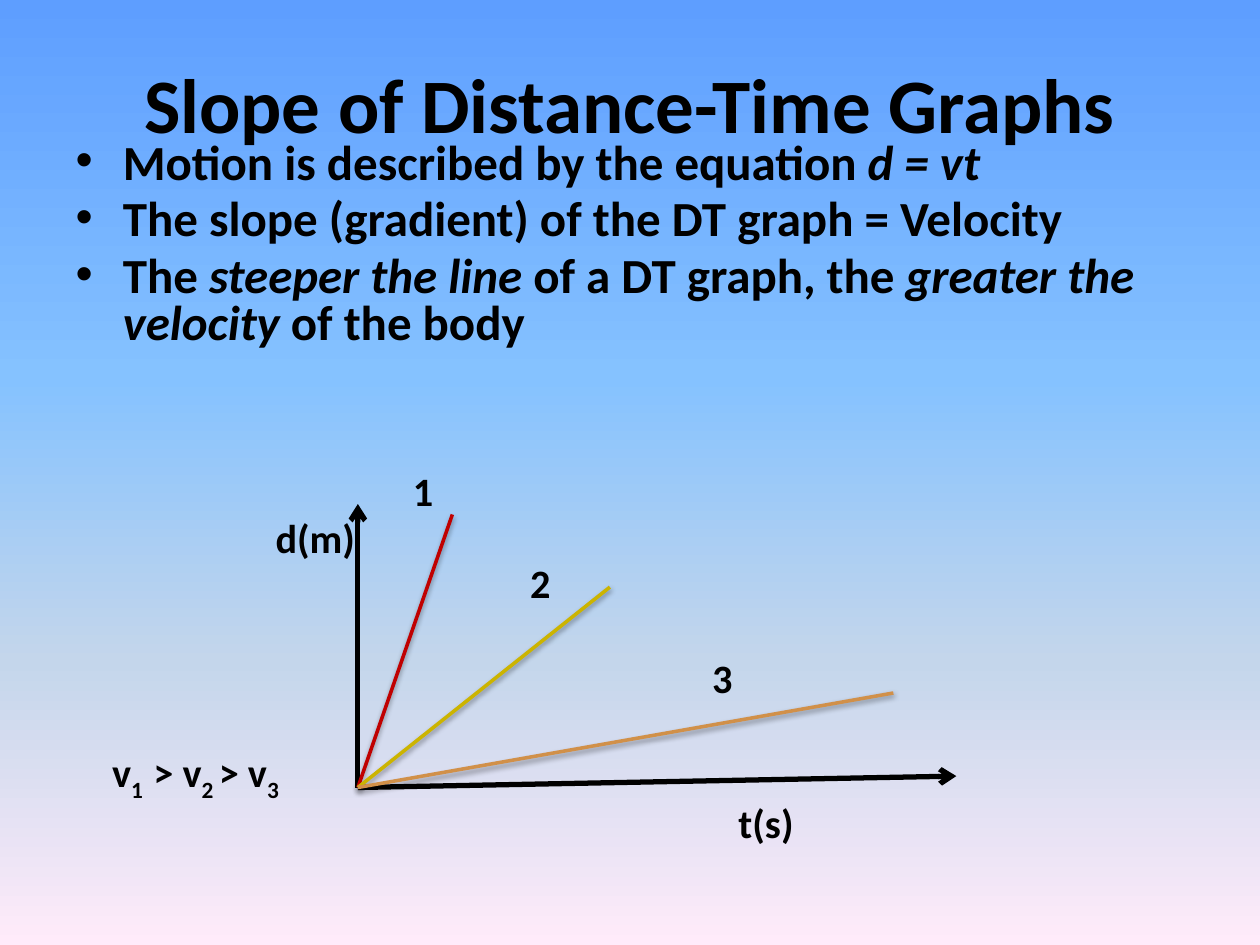
from lxml.etree import SubElement
from pptx import Presentation
from pptx.dml.color import RGBColor
from pptx.enum.shapes import MSO_CONNECTOR as Connector
from pptx.enum.text import MSO_ANCHOR as Anchor, PP_ALIGN as Align
from pptx.oxml.ns import qn
from pptx.util import Pt

COLORS = {
    "text": "000000",
    "steep": "C00000",
    "medium": "CCB400",
    "shallow": "D19049",
}
BACKGROUND_STOPS = [(0, "5E9EFF"), (40, "85C2FF"), (70, "C4D6EB"), (100, "FFEBFA")]


def add_run(paragraph, text, size, italic=False, subscript=False):
    run = paragraph.add_run()
    run.text = text
    run.font.name = "Calibri"
    run.font.size = Pt(size)
    run.font.bold = True
    run.font.italic = italic
    run.font.color.rgb = RGBColor.from_string(COLORS["text"])
    if subscript:
        run.font._element.set("baseline", "-25000")


def add_line(start, end, color, width):
    connector = slide.shapes.add_connector(
        Connector.STRAIGHT, *[Pt(value) for value in (*start, *end)]
    )
    connector.line.color.rgb = RGBColor.from_string(COLORS[color])
    connector.line.width = Pt(width)
    effects = SubElement(connector._element.spPr, qn("a:effectLst"))
    return connector, effects


presentation = Presentation()
presentation.slide_width = Pt(720)
presentation.slide_height = Pt(540)
slide = presentation.slides.add_slide(presentation.slide_layouts[1])

background = slide.background.fill
background.gradient()
background.gradient_angle = 270
stop_list = slide.element.find(".//" + qn("a:gsLst"))
for stop in list(stop_list):
    stop_list.remove(stop)
for position, color in BACKGROUND_STOPS:
    stop = SubElement(stop_list, qn("a:gs"), pos=str(position * 1000))
    SubElement(stop, qn("a:srgbClr"), val=color)

body = slide.placeholders[1]
body.left, body.top, body.width, body.height = Pt(36), Pt(77.76), Pt(648), Pt(200)
bullets = [
    [("Motion is described by the equation ", False), ("d = vt", True)],
    [("The slope (gradient) of the DT graph = Velocity", False)],
    [
        ("The ", False),
        ("steeper the line ", True),
        ("of a DT graph, the ", False),
        ("greater the velocity ", True),
        ("of the body", False),
    ],
]
for index, runs in enumerate(bullets):
    frame = body.text_frame
    paragraph = frame.paragraphs[0] if index == 0 else frame.add_paragraph()
    paragraph.line_spacing = 0.8
    for text, italic in runs:
        add_run(paragraph, text, 28, italic=italic)

title = slide.shapes.title
title.left, title.top, title.width, title.height = Pt(36), Pt(21.6), Pt(648), Pt(74)
title.text_frame.vertical_anchor = Anchor.MIDDLE
title_paragraph = title.text_frame.paragraphs[0]
title_paragraph.alignment = Align.CENTER
add_run(title_paragraph, "Slope of Distance-Time Graphs", 44)

origin = (204.5, 450)
for axis_end in [(204.5, 288), (546.5, 443.5)]:
    axis, effects = add_line(origin, axis_end, "text", 3)
    SubElement(axis.line._get_or_add_ln(), qn("a:tailEnd"), type="arrow")

graph_lines = [
    ((258.5, 294), "steep"),
    ((348.5, 335.5), "medium"),
    ((510.5, 396), "shallow"),
]
for line_end, color in graph_lines:
    graph_line, effects = add_line(origin, line_end, color, 2)
    shadow = SubElement(
        effects, qn("a:outerShdw"),
        blurRad=str(Pt(3.1)), dist=str(Pt(1.6)), dir="5400000", rotWithShape="0",
    )
    shadow_color = SubElement(shadow, qn("a:srgbClr"), val=COLORS["text"])
    SubElement(shadow_color, qn("a:alpha"), val="38000")

labels = [
    (236, 280, 20, [("1", False)]),
    (157.5, 307, 50, [("d(m)", False)]),
    (303, 333, 20, [("2", False)]),
    (407, 387, 20, [("3", False)]),
    (64, 443, 110, [
        ("v", False), ("1  ", True), ("> v", False),
        ("2 ", True), ("> v", False), ("3", True),
    ]),
    (422, 470, 40, [("t(s)", False)]),
]
for left, middle, width, runs in labels:
    label = slide.shapes.add_textbox(Pt(left), Pt(middle - 14), Pt(width), Pt(28))
    frame = label.text_frame
    frame.margin_left = frame.margin_right = frame.margin_top = frame.margin_bottom = 0
    frame.vertical_anchor = Anchor.MIDDLE
    frame.word_wrap = True
    for text, subscript in runs:
        add_run(frame.paragraphs[0], text, 23, subscript=subscript)

presentation.save("out.pptx")
